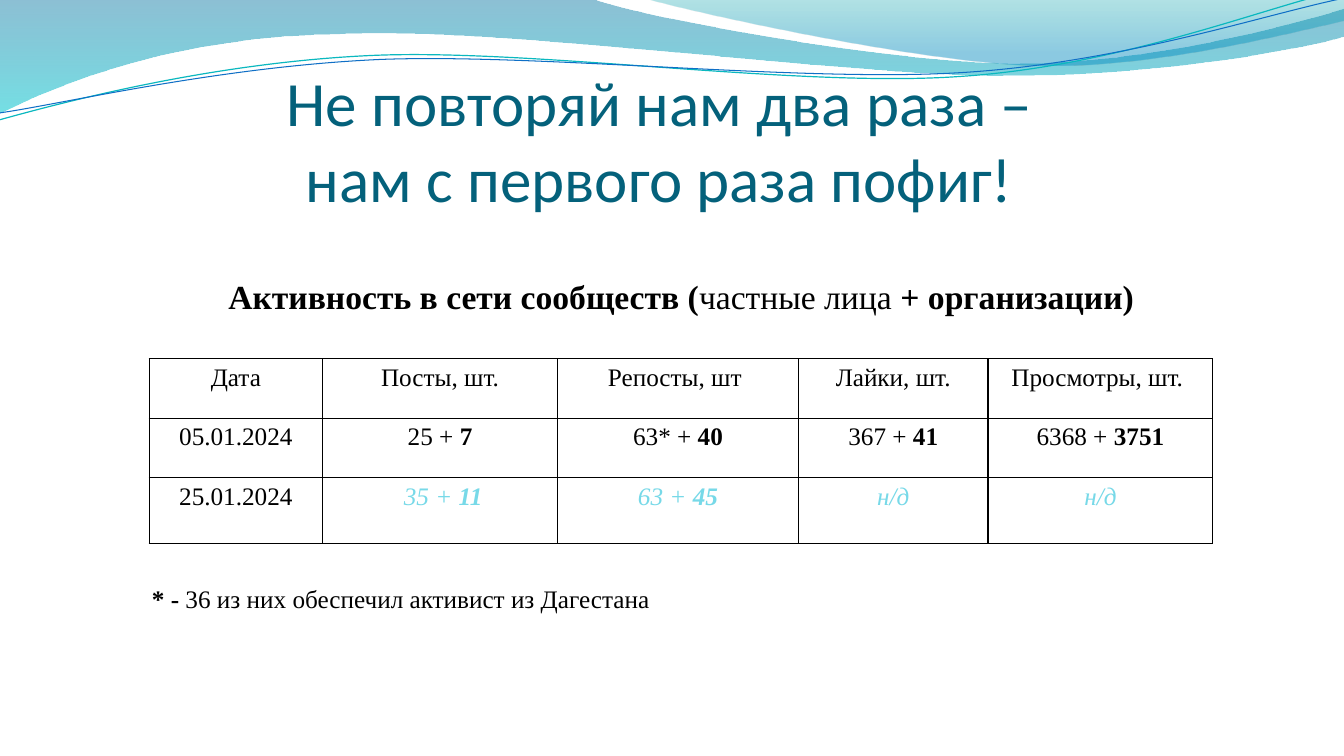
from lxml.etree import SubElement as Sub
from pptx import Presentation
from pptx.dml.color import RGBColor as RGB
from pptx.enum.text import MSO_ANCHOR as Anchor, PP_ALIGN as Align
from pptx.oxml.ns import qn
from pptx.util import Inches, Pt

COLORS = {
    "black": "000000", "title": "04617B", "pale": "77D9E8",
    "deep": "0074A1", "aqua": "00C6CF", "teal": "00A1A9", "sky": "008BBF",
    "cyan": "0AB8BF", "blue": "0F6FC6",
}
SERIF = "Times New Roman"

prs = Presentation()
prs.slide_width, prs.slide_height = Inches(13.33), Inches(7.5)
slide = prs.slides.add_slide(prs.slide_layouts[6])


def add_wave(start, steps, close):
    """Draw an outline; a step is one point, or two controls and an end."""
    steps = [[(Inches(x), Inches(y)) for x, y in step] for step in steps]
    pen = slide.shapes.build_freeform(Inches(start[0]), Inches(start[1]))
    pen.add_line_segments([step[-1] for step in steps], close=close)
    wave = pen.convert_to_shape()
    wave.shadow.inherit = False
    nodes = wave._element.iter(qn("a:lnTo"))
    for node, step in zip(list(nodes), steps):
        if len(step) == 3:
            node.tag = qn("a:cubicBezTo")
            for i, (x, y) in enumerate(step[:2]):
                pt = Sub(node, qn("a:pt"), x=str(x - wave.left), y=str(y - wave.top))
                node.insert(i, pt)
    return wave


def add_runs(frame, runs, size, font, align=Align.CENTER):
    """Fill the last paragraph; a run is text, style letters (b, i) and colour."""
    para = frame.paragraphs[-1]
    para.alignment = align
    for text, style, color in runs:
        run = para.add_run()
        run.text = text
        run.font.name, run.font.size = font, Pt(size)
        run.font.bold, run.font.italic = "b" in style, "i" in style
        run.font.color.rgb = RGB.from_string(COLORS[color])


# Filled bands: start, steps, gradient stops (position, colour, opacity %)
bands = [
    ((0, 0),
     [[(5.87, -0.01)],
      [(6.34, 0.17), (8.85, 0.63), (10.11, 0.63)],
      [(11.38, 0.63), (12.78, 0.26), (13.33, 0.09)],
      [(13.35, 0.36)],
      [(13.11, 0.44), (11.6, 0.76), (9.94, 0.75)],
      [(8.29, 0.75), (5.09, 0.28), (3.43, 0.34)],
      [(1.72, 0.36), (0.61, 0.83), (-0.01, 1.13)]],
     [(0, "deep", 45), (1, "aqua", 55)]),
    ((6.39, -0.01),
     [[(6.79, 0.11), (9.09, 0.62), (10.25, 0.65)],
      [(11.41, 0.69), (12.82, 0.32), (13.33, 0.21)],
      [(13.33, 0)]],
     [(0, "teal", 30), (0.8, "sky", 45)]),
]
for start, steps, stops in bands:
    band = add_wave(start, steps, True)
    band.line.fill.background()
    band.fill.gradient()
    band.fill.gradient_angle = 270
    for stop, (pos, color, alpha) in zip(band.fill.gradient_stops, stops):
        stop.position = pos
        stop.color.rgb = RGB.from_string(COLORS[color])
    tints = band._element.spPr.iter(qn("a:srgbClr"))
    for tint, (pos, color, alpha) in zip(list(tints), stops):
        Sub(tint, qn("a:alpha"), val=str(alpha * 1000))

# Thin lines: start, steps, colour, width
lines = [
    ((-0.01, 1.19),
     [[(0.64, 1.01), (2.11, 0.62), (3.69, 0.55)],
      [(5.27, 0.48), (7.9, 0.87), (9.5, 0.76)],
      [(11.1, 0.66), (12.52, 0.08), (13.31, -0.1)]], "cyan", 0.85),
    ((0, 1.12),
     [[(0.63, 1.03), (2.18, 0.66), (3.78, 0.59)],
      [(5.37, 0.53), (7.96, 0.82), (9.55, 0.72)],
      [(11.15, 0.62), (12.55, 0.14), (13.34, -0.02)]], "blue", 0.75),
]
for start, steps, color, width in lines:
    line = add_wave(start, steps, False)
    line.fill.background()
    line.line.color.rgb = RGB.from_string(COLORS[color])
    line.line.width = Pt(width)

# Title
box = slide.shapes.add_textbox(Inches(0.25), Inches(0.58), Inches(12.72), Inches(1.55))
title = box.text_frame
title.word_wrap = True
title.vertical_anchor = Anchor.BOTTOM
title.margin_left = title.margin_right = title.margin_bottom = 0
add_runs(title, [("Не повторяй нам два раза – ", "", "title")], 45, "Calibri")
title.paragraphs[0].add_line_break()
add_runs(title, [("нам с первого раза пофиг! ", "", "title")], 45, "Calibri")

# Table
def_run = ("", "black")
pale = ("н/д", "i", "pale")
rows = [
    [[(text, *def_run)] for text in
     ("Дата", "Посты, шт.", "Репосты, шт ", "Лайки, шт.", "Просмотры, шт. ")],
    [[("05.01.2024", *def_run)]] + [
        [(own + " + ", *def_run), (org, "b", "black")] for own, org in
        (("25", "7"), ("63*", "40"), ("367", "41"), ("6368", "3751"))],
    [[("25.01.2024", *def_run)]] + [
        [(own + " + ", "i", "pale"), (org, "bi", "pale")] for own, org in
        ((" 35", "11"), ("63", "45"))] + [[pale], [pale]],
]
widths = [1.72, 2.33, 2.39, 1.88, 2.23]
heights = [0.59, 0.59, 0.65]
table = slide.shapes.add_table(
    len(rows), len(widths), Inches(1.48), Inches(3.56),
    Inches(sum(widths)), Inches(sum(heights))).table
table.first_row = table.horz_banding = False
for col, width in zip(table.columns, widths):
    col.width = Inches(width)
for row, height, cells in zip(table.rows, heights, rows):
    row.height = Inches(height)
    for cell, runs in zip(row.cells, cells):
        add_runs(cell.text_frame, runs, 18, SERIF)
        props = cell._tc.get_or_add_tcPr()
        for side in ("lnL", "lnR", "lnT", "lnB"):
            edge = Sub(props, qn("a:" + side), w=str(Pt(1)))
            fill = Sub(edge, qn("a:solidFill"))
            Sub(fill, qn("a:srgbClr"), val=COLORS["black"])
        cell.fill.background()

# Caption and footnote
notes = [
    ((2.01, 2.69, 9.49, 0.5), 24,
     [("Активность в сети сообществ (", "b", "black"),
      ("частные лица ", "", "black"), ("+ организации)", "b", "black")]),
    ((1.38, 5.74, 5.19, 0.4), 18,
     [("* - ", "b", "black"),
      ("36 из них обеспечил активист из Дагестана", "", "black")]),
]
for place, size, runs in notes:
    box = slide.shapes.add_textbox(*map(Inches, place))
    box.text_frame.word_wrap = True
    add_runs(box.text_frame, runs, size, SERIF)

prs.save("out.pptx")
